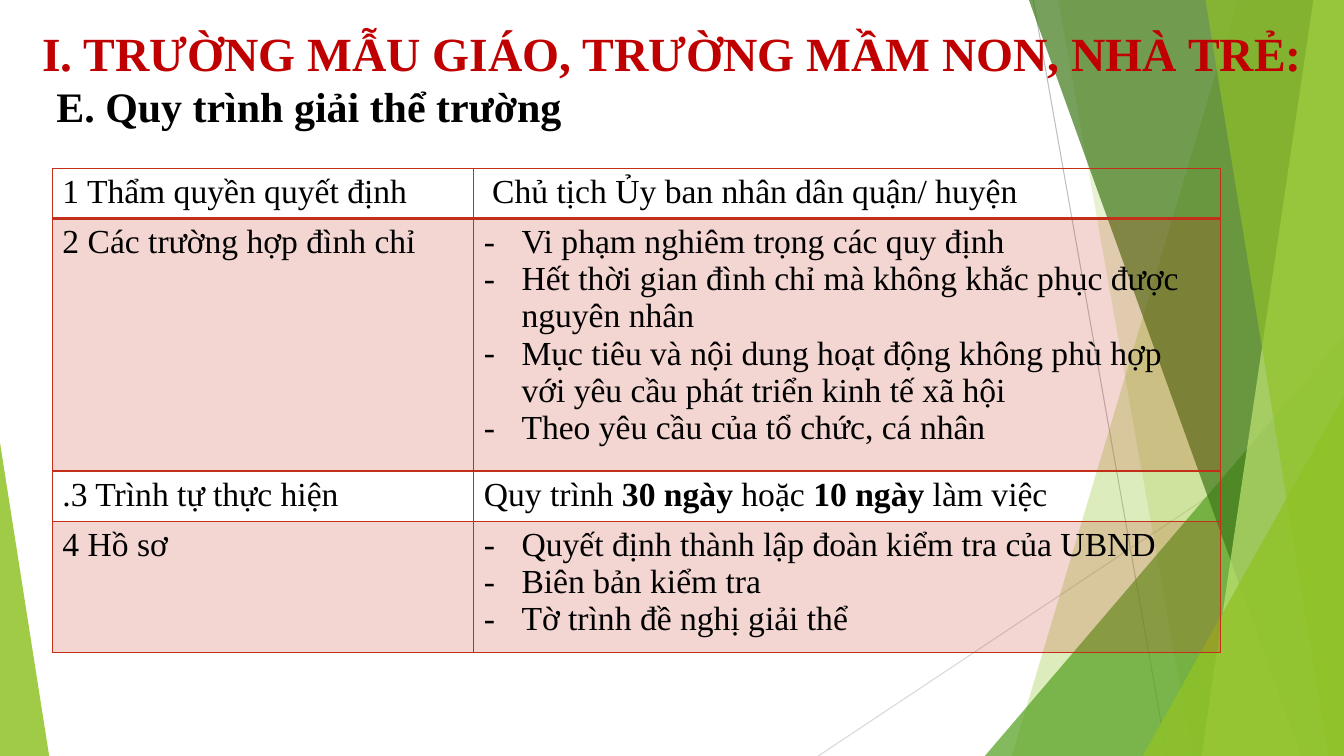
from lxml import etree
from pptx import Presentation
from pptx.dml.color import RGBColor
from pptx.enum.shapes import MSO_CONNECTOR, MSO_SHAPE
from pptx.enum.text import MSO_ANCHOR, MSO_AUTO_SIZE, PP_ALIGN
from pptx.oxml.ns import qn
from pptx.util import Cm, Pt

STRAIGHT = MSO_CONNECTOR.STRAIGHT
TRIANGLE = MSO_SHAPE.ISOSCELES_TRIANGLE
MIDDLE = MSO_ANCHOR.MIDDLE
NO_FIT = MSO_AUTO_SIZE.NONE
LEFT = PP_ALIGN.LEFT

FONT = "Times New Roman"
GREEN, RED, BLACK = "90C226", "C42F1A", "000000"
WIDTH, HEIGHT = 33.87, 19.05


def paint(fill, colour, opacity=100):
    """Fill with a hex colour; opacity is a percentage."""
    fill.solid()
    fill.fore_color.rgb = RGBColor.from_string(colour)
    if opacity < 100:
        tone = fill._xPr.find(f"{qn('a:solidFill')}/{qn('a:srgbClr')}")
        etree.SubElement(tone, qn("a:alpha"), val=str(opacity * 1000))


def style(span, size, colour, bold):
    span.font.name = FONT
    span.font.size = Pt(size)
    span.font.bold = bold
    paint(span.font.fill, colour)


deck = Presentation()
deck.slide_width, deck.slide_height = Cm(WIDTH), Cm(HEIGHT)
page = deck.slides.add_slide(deck.slide_layouts[5])
shapes = page.shapes

# Thin background lines
for start_x, start_y, end_x, colour in [
    (26.04, 0, 29.41, "BFBFBF"),
    (WIDTH, 10.24, 20.62, "D9D9D9"),
]:
    line = shapes.add_connector(STRAIGHT, Cm(start_x), Cm(start_y), Cm(end_x), Cm(HEIGHT))
    paint(line.line.fill, colour)
    line.line.width = Pt(0.75)
    etree.SubElement(line._element.spPr, qn("a:effectLst"))

# Green facets: a panel runs from its slanted left edge (top x, bottom x) to the
# right side of the page; a triangle (left, top, width, apex) stands on the bottom
facets = [
    ("panel", GREEN, 30, (31.19, 25.5)),
    ("panel", GREEN, 20, (26.67, 30.05)),
    ("triangle", "54A021", 72, (24.82, 8.46, 9.05, 1)),
    ("panel", "3F7819", 70, (25.93, 32.79)),
    ("panel", "C0E474", 70, (33.1, 30.28)),
    ("panel", GREEN, 65, (30.38, 33.48)),
    ("triangle", GREEN, 80, (28.8, 9.98, 5.07, 1)),
    ("triangle", GREEN, 85, (0, 11.15, 1.24, 0)),
]
for kind, colour, opacity, place in facets:
    if kind == "panel":
        top_x, bottom_x = place
        outline = shapes.build_freeform(Cm(top_x), 0)
        corners = [(WIDTH, 0), (WIDTH, HEIGHT), (bottom_x, HEIGHT)]
        outline.add_line_segments([(Cm(x), Cm(y)) for x, y in corners])
        facet = outline.convert_to_shape()
    else:
        left, top, width, apex = place
        facet = shapes.add_shape(TRIANGLE, Cm(left), Cm(top), Cm(width), Cm(HEIGHT - top))
        facet.adjustments[0] = apex
    paint(facet.fill, colour, opacity)
    facet.line.fill.background()
    facet.shadow.inherit = False

# Headings, in front of the facets
title = shapes.title
title.element.getparent().append(title.element)
title.left, title.top, title.width, title.height = Cm(0.81), Cm(0.53), Cm(33.05), Cm(1.6)
subtitle = shapes.add_textbox(Cm(1.17), Cm(1.9), Cm(31.78), Cm(1.55))
for box, text, size, colour in [
    (title, "I. TRƯỜNG MẪU GIÁO, TRƯỜNG MẦM NON, NHÀ TRẺ:", 34, "C00000"),
    (subtitle, "E. Quy trình giải thể trường", 30, BLACK),
]:
    frame = box.text_frame
    frame.text = text
    frame.word_wrap = True
    frame.auto_size = NO_FIT
    frame.vertical_anchor = MIDDLE
    para = frame.paragraphs[0]
    para.alignment = LEFT
    style(para.runs[0], size, colour, True)

# Table: row height, label, lines of the answer; words between bars are bold
rows = [
    (1.27, "1 Thẩm quyền quyết định", [" Chủ tịch Ủy ban nhân dân quận/ huyện"]),
    (6.36, "2 Các trường hợp đình chỉ", [
        "Vi phạm nghiêm trọng các quy định",
        "Hết thời gian đình chỉ mà không khắc phục được nguyên nhân",
        "Mục tiêu và nội dung hoạt động không phù hợp với yêu cầu phát triển kinh tế xã hội",
        "Theo yêu cầu của tổ chức, cá nhân",
    ]),
    (1.27, ".3 Trình tự thực hiện", ["Quy trình |30 ngày |hoặc |10 ngày |làm việc"]),
    (3.3, "4 Hồ sơ", [
        "Quyết định thành lập đoàn kiểm tra của UBND",
        "Biên bản kiểm tra",
        "Tờ trình đề nghị giải thể",
    ]),
]
table_height = sum(height for height, label, answer in rows)
table = shapes.add_table(
    len(rows), 2, Cm(1.32), Cm(4.24), Cm(29.44), Cm(table_height)
).table
table.first_row = table.horz_banding = False
table.columns[0].width, table.columns[1].width = Cm(10.62), Cm(18.82)

for row_index, (height, label, answer) in enumerate(rows):
    table.rows[row_index].height = Cm(height)
    for column_index, lines in enumerate([[label], answer]):
        cell = table.cell(row_index, column_index)
        borders = cell._tc.get_or_add_tcPr()
        for side in "LRTB":
            heavy = (row_index, side) in [(0, "B"), (1, "T")]
            border = etree.SubElement(
                borders, qn(f"a:ln{side}"), w=str(Pt(2 if heavy else 1))
            )
            solid = etree.SubElement(border, qn("a:solidFill"))
            etree.SubElement(solid, qn("a:srgbClr"), val=RED)
        if row_index % 2:
            paint(cell.fill, RED, 20)
        else:
            cell.fill.background()

        frame = cell.text_frame
        for line_index, text in enumerate(lines):
            para = frame.add_paragraph() if line_index else frame.paragraphs[0]
            for part_index, part in enumerate(text.split("|")):
                span = para.add_run()
                span.text = part
                style(span, 24, BLACK, part_index % 2 == 1)
            if len(lines) > 1:
                layout = para._p.get_or_add_pPr()
                layout.set("marL", str(Cm(0.95)))
                layout.set("indent", str(Cm(-0.95)))
                etree.SubElement(layout, qn("a:buFont"), typeface=FONT)
                etree.SubElement(layout, qn("a:buChar"), char="-")

deck.save("out.pptx")
